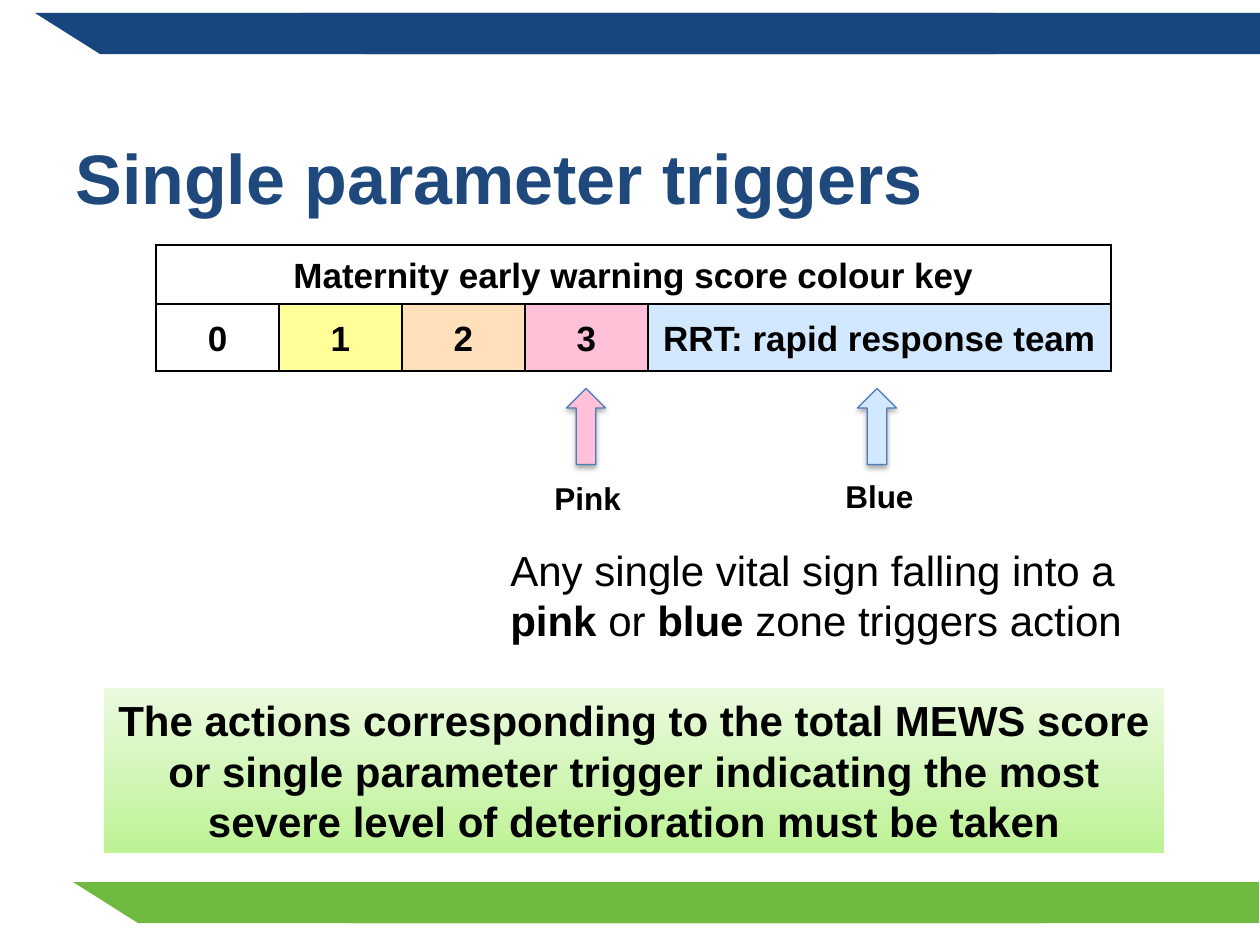
from typing import NamedTuple

from lxml import etree
from pptx import Presentation
from pptx.dml.color import RGBColor
from pptx.enum.shapes import MSO_SHAPE
from pptx.enum.text import MSO_ANCHOR, PP_ALIGN
from pptx.oxml import parse_xml
from pptx.oxml.ns import nsdecls, qn
from pptx.util import Emu, Pt

PX_PER_INCH = 126
FONT = "Arial"
BLACK, PINK, BLUE = "000000", "FFC0D8", "D1E8FF"


class Banner(NamedTuple):
    lefts: tuple[int, int]
    top: int
    width: int
    color: str


class Zone(NamedTuple):
    name: str
    arrow_left: int
    label_top: int
    color: str


class Score(NamedTuple):
    text: str
    width: int
    color: str | None


BANNERS = [
    Banner((73, 286), 882, 973, "71BA41"),
    Banner((35, 300), 13, 960, "17467E"),
]
ZONES = [Zone("Pink", 548, 473, PINK), Zone("Blue", 839, 471, BLUE)]
SCORES = [
    Score("0", 123, None),
    Score("1", 123, "FFFF99"),
    Score("2", 123, "FFE0BA"),
    Score("3", 123, PINK),
    Score("RRT: rapid response team", 463, BLUE),
]


def px(length: int) -> Emu:
    return Emu(round(length * 914400 / PX_PER_INCH))


def box(*lengths: int) -> list[Emu]:
    return [px(length) for length in lengths]


def rgb(color: str) -> RGBColor:
    return RGBColor.from_string(color)


def style(font, size: int, bold: bool = False, color: str = BLACK) -> None:
    font.name, font.size, font.bold = FONT, Pt(size), bold
    font.color.rgb = rgb(color)


def draw_banner(slide, banner: Banner) -> None:
    """Draw two overlapping bands, each with a slanted left end."""
    height, slant = 41, 65
    for left in banner.lefts:
        right, bottom = left + banner.width, banner.top + height
        outline = slide.shapes.build_freeform(*box(left, banner.top))
        outline.add_line_segments(
            [box(right, banner.top), box(right, bottom), box(left + slant, bottom)]
        )
        band = outline.convert_to_shape()
        band.shadow.inherit = False
        band.fill.solid()
        band.fill.fore_color.rgb = rgb(banner.color)
        band.line.fill.background()


def add_soft_shadow(shape) -> None:
    shape.shadow.inherit = False
    effects = shape._element.spPr.find(qn("a:effectLst"))
    effects.append(parse_xml(
        f'<a:outerShdw {nsdecls("a")} blurRad="39400" dist="22900" dir="5400000" '
        'rotWithShape="0"><a:srgbClr val="000000"><a:alpha val="35000"/>'
        "</a:srgbClr></a:outerShdw>"
    ))


def draw_zone(slide, zone: Zone) -> None:
    arrow = slide.shapes.add_shape(
        MSO_SHAPE.RIGHT_ARROW, *box(zone.arrow_left, 407, 76, 39)
    )
    arrow.rotation = 270
    arrow.fill.solid()
    arrow.fill.fore_color.rgb = rgb(zone.color)
    arrow.line.color.rgb = rgb("4A7DBA")
    arrow.line.width = Pt(0.75)
    add_soft_shadow(arrow)

    label = slide.shapes.add_textbox(*box(zone.arrow_left - 6, zone.label_top, 129, 28))
    label.text_frame.word_wrap = True
    label.text_frame.text = zone.name
    style(label.text_frame.paragraphs[0].runs[0].font, 18, True)


def add_borders(cell) -> None:
    properties = cell._tc.get_or_add_tcPr()
    for side in ("lnL", "lnR", "lnT", "lnB"):
        border = etree.SubElement(properties, qn(f"a:{side}"), w=str(Pt(1)))
        fill = etree.SubElement(border, qn("a:solidFill"))
        etree.SubElement(fill, qn("a:srgbClr"), val=BLACK)


def format_cell(cell, text: str, color: str | None) -> None:
    cell.margin_left = cell.margin_right = px(9)
    cell.margin_top = cell.margin_bottom = 0
    cell.vertical_anchor = MSO_ANCHOR.MIDDLE
    if color:
        cell.fill.solid()
        cell.fill.fore_color.rgb = rgb(color)
    else:
        cell.fill.background()
    paragraph = cell.text_frame.paragraphs[0]
    paragraph.text = text
    paragraph.alignment = PP_ALIGN.CENTER
    paragraph.line_spacing = 1.07
    style(paragraph.runs[0].font, 20, True)


def draw_colour_key(slide) -> None:
    width = sum(score.width for score in SCORES)
    key = slide.shapes.add_table(2, len(SCORES), *box(156, 245, width, 126)).table
    key.first_row = key.horz_banding = False
    for row, height in zip(key.rows, (59, 67)):
        row.height = px(height)
    for cell in key.iter_cells():
        add_borders(cell)
    heading = key.cell(0, 0)
    heading.merge(key.cell(0, len(SCORES) - 1))
    format_cell(heading, "Maternity early warning score colour key", None)
    for column, score in enumerate(SCORES):
        key.columns[column].width = px(score.width)
        format_cell(key.cell(1, column), score.text, score.color)


def draw_rule(slide) -> None:
    rule = slide.shapes.add_textbox(*box(498, 538, 667, 111))
    rule.text_frame.word_wrap = True
    paragraph = rule.text_frame.paragraphs[0]
    paragraph.text = "Any single vital sign falling into a \v"
    for text in ("pink", " or ", "blue ", "zone triggers action"):
        paragraph.add_run().text = text
    for run in paragraph.runs:
        style(run.font, 24, run.text.strip() in ("pink", "blue"))


def draw_action(slide) -> None:
    action = slide.shapes.add_shape(MSO_SHAPE.RECTANGLE, *box(104, 688, 1060, 165))
    action.shadow.inherit = False
    action.line.fill.background()
    action.fill.gradient()
    action.fill.gradient_angle = 90
    for stop, color in zip(action.fill.gradient_stops, ("BDF295", "EAFADE")):
        stop.color.rgb = rgb(color)
    action.text_frame.word_wrap = True
    action.text_frame.text = (
        "The actions corresponding to the total MEWS score or single parameter "
        "trigger indicating the most severe level of deterioration must be taken"
    )
    paragraph = action.text_frame.paragraphs[0]
    paragraph.alignment = PP_ALIGN.CENTER
    style(paragraph.runs[0].font, 24, True)


def set_title(slide) -> None:
    title = slide.shapes.title
    title.left, title.top, title.width, title.height = box(63, 126, 1134, 101)
    frame = title.text_frame
    frame.text = "Single parameter triggers"
    frame.vertical_anchor = MSO_ANCHOR.MIDDLE
    frame.paragraphs[0].alignment = PP_ALIGN.LEFT
    style(frame.paragraphs[0].runs[0].font, 40, True, "1F497D")


def main() -> None:
    deck = Presentation()
    deck.slide_width, deck.slide_height = box(1260, 945)
    slide = deck.slides.add_slide(deck.slide_layouts[5])
    for banner in BANNERS:
        draw_banner(slide, banner)
    draw_rule(slide)
    for zone in ZONES:
        draw_zone(slide, zone)
    draw_action(slide)
    draw_colour_key(slide)
    set_title(slide)
    deck.save("out.pptx")


if __name__ == "__main__":
    main()
